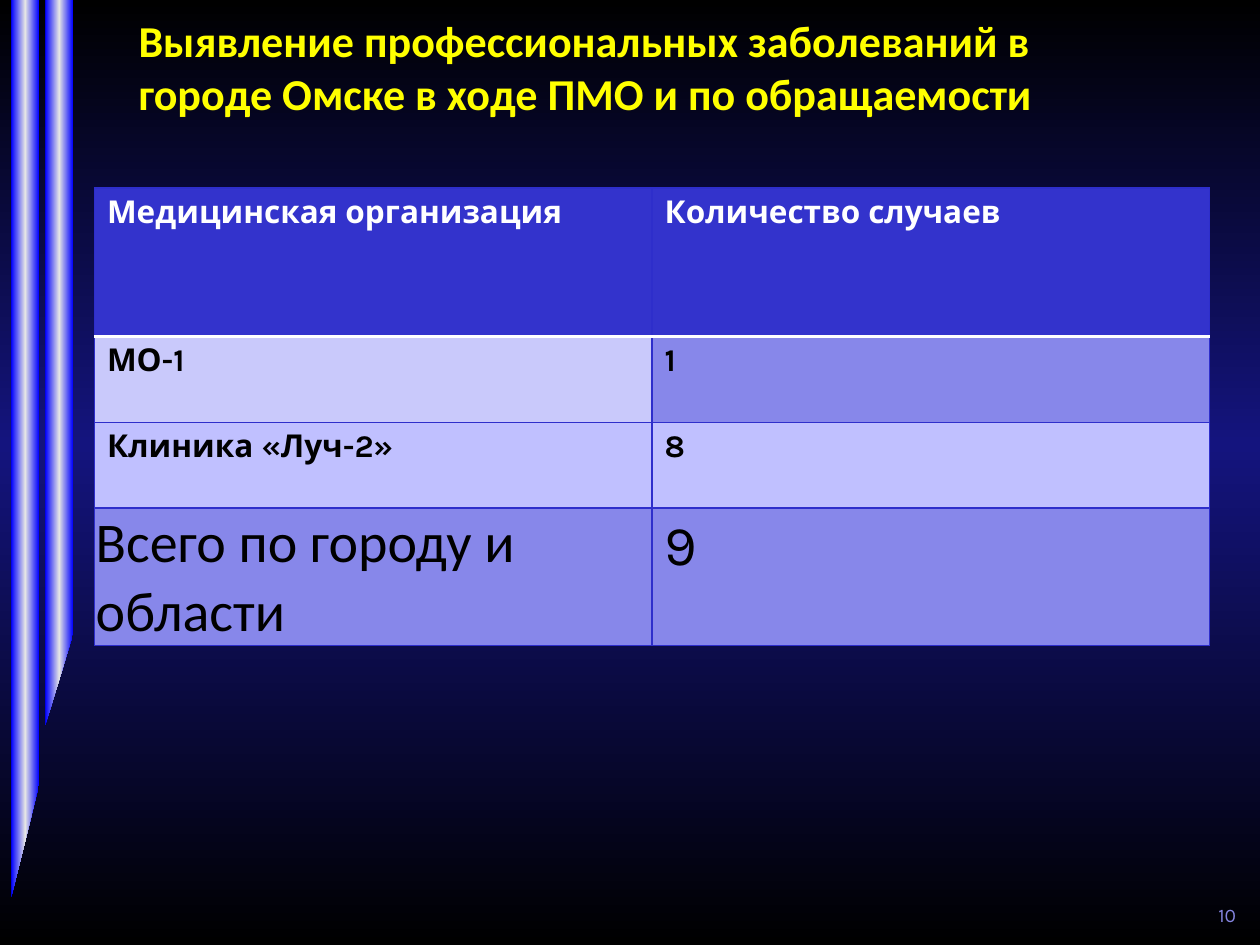
from lxml.etree import SubElement
from pptx import Presentation
from pptx.dml.color import RGBColor
from pptx.enum.text import MSO_ANCHOR, PP_ALIGN
from pptx.oxml.ns import qn
from pptx.util import Inches, Pt

WIDE, HIGH = 10, 7.5
EDGE = "2E2ECB"
HEAD, PALE, MID, SOFT = "3333CC", "C9C9FB", "8787EA", "C0C0FF"
ROWS = [
    (1.18, ("Медицинская организация", "Количество случаев"), (HEAD, HEAD)),
    (0.68, ("МО-1", "1"), (PALE, MID)),
    (0.68, ("Клиника «Луч-2»", "8"), (SOFT, SOFT)),
    (1.09, ("Всего по городу и области", "9"), (MID, MID)),
]


def tint(code):
    return RGBColor.from_string(code)


def scale(box):
    sides = (WIDE, HIGH, WIDE, HIGH)
    return [Inches(share * side / 100) for share, side in zip(box, sides)]


def write(frame, text, size=18, font="Karla", color="000000", bold=False,
          align=PP_ALIGN.LEFT):
    frame.word_wrap = True
    para = frame.paragraphs[0]
    para.alignment = align
    run = para.add_run()
    run.text = text
    run.font.size, run.font.name, run.font.bold = Pt(size), font, bold
    run.font.color.rgb = tint(color)


def blend(fill, root, stops, turn):
    fill.gradient()
    grad = root.find(".//" + qn("a:gradFill"))
    chain = grad.find(qn("a:gsLst"))
    for old in list(chain):
        chain.remove(old)
    for place, code in stops:
        stop = SubElement(chain, qn("a:gs"), pos=str(place * 1000))
        SubElement(stop, qn("a:srgbClr"), val=code)
    grad.find(qn("a:lin")).set("ang", str(turn * 60000))


def ribbon(slide, box, slant):
    left, top, width, height = scale(box)
    right, low = left + width, top + height
    pen = slide.shapes.build_freeform(left, top)
    pen.add_line_segments([(right, top), (right, low - Inches(slant)), (left, low)])
    shape = pen.convert_to_shape()
    shape.shadow.inherit = False
    shape.line.fill.background()
    blend(shape.fill, shape._element,
          [(0, "0000FF"), (50, "E5E5E5"), (100, "0000FF")], 0)


def label(slide, box, text, inset, anchor, **style):
    frame = slide.shapes.add_textbox(*scale(box)).text_frame
    frame.margin_left = frame.margin_right = Inches(inset)
    frame.margin_top = frame.margin_bottom = Inches(inset / 2)
    frame.vertical_anchor = anchor
    write(frame, text, **style)


def border(cell, lines):
    props = cell._tc.get_or_add_tcPr()
    for spot, (side, (code, width)) in enumerate(lines.items()):
        line = SubElement(props, qn("a:ln" + side), w=str(Pt(width)))
        SubElement(SubElement(line, qn("a:solidFill")), qn("a:srgbClr"), val=code)
        props.insert(spot, line)


def grid(slide, box):
    table = slide.shapes.add_table(len(ROWS), 2, *scale(box)).table
    last = len(ROWS) - 1
    for y, (height, texts, fills) in enumerate(ROWS):
        table.rows[y].height = Inches(height)
        for x, (text, code) in enumerate(zip(texts, fills)):
            cell = table.cell(y, x)
            cell.fill.solid()
            cell.fill.fore_color.rgb = tint(code)
            lines = dict.fromkeys("LRTB", (EDGE, 0.75))
            if y == 0:
                lines["B"] = ("FFFFFF", 2)
            if y == 1:
                lines["T"] = ("FFFFFF", 2)
            border(cell, lines)
            total = y == last and x == 0
            if total:
                cell.margin_left = cell.margin_right = cell.margin_top = Inches(0.01)
                cell.margin_bottom = 0
                cell.vertical_anchor = MSO_ANCHOR.BOTTOM
            write(cell.text_frame, text, size=32 if y == last else 18,
                  font="Calibri" if total else "Karla", bold=y < last,
                  color="FFFFFF" if y == 0 else "000000")


def main():
    deck = Presentation()
    deck.slide_width, deck.slide_height = Inches(WIDE), Inches(HIGH)
    slide = deck.slides.add_slide(deck.slide_layouts[6])
    blend(slide.background.fill, slide._element,
          [(0, "000000"), (53, "14147E"), (100, "000000")], 270)
    ribbon(slide, (3.6, 0, 2.2, 76.7), 0.72)
    ribbon(slide, (0.9, 0, 2.2, 94.9), 0.89)
    label(slide, (11, 1.4, 75.6, 11.4),
          "Выявление профессиональных заболеваний в городе Омске в ходе ПМО и по обращаемости",
          0, MSO_ANCHOR.TOP, size=25.2, font="Calibri", color="FFFF00", bold=True)
    grid(slide, (7.5, 19.9, 88.5, 48.4))
    label(slide, (69.1, 93.3, 30, 5.4), "10", 0.1, MSO_ANCHOR.BOTTOM,
          size=11, color="8585E0", align=PP_ALIGN.RIGHT)
    deck.save("out.pptx")


if __name__ == "__main__":
    main()
